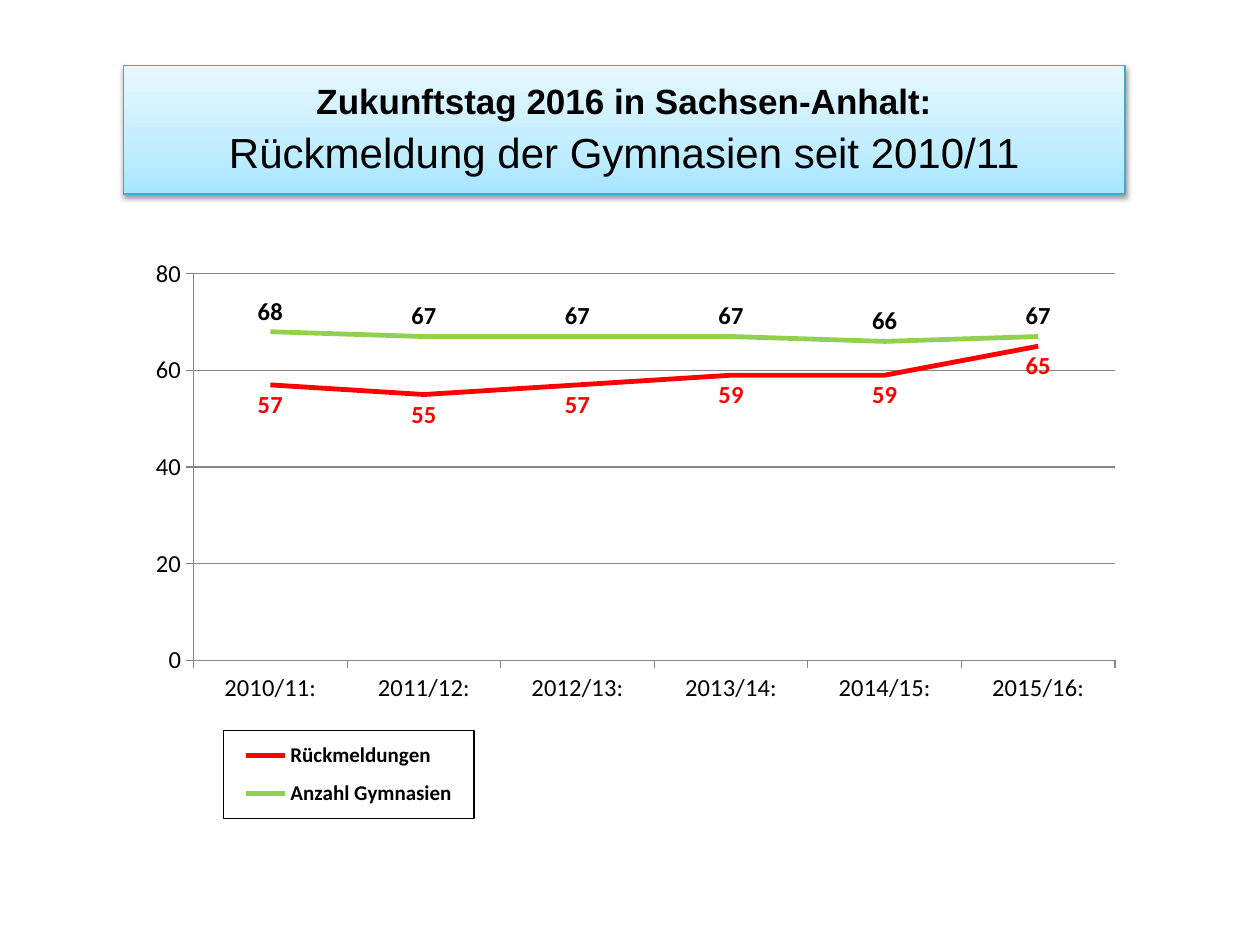
from dataclasses import dataclass
from copy import deepcopy

from lxml.etree import SubElement
from pptx import Presentation
from pptx.chart.data import CategoryChartData
from pptx.dml.color import RGBColor
from pptx.enum.chart import XL_CHART_TYPE, XL_LABEL_POSITION, XL_LEGEND_POSITION, XL_TICK_MARK
from pptx.enum.shapes import MSO_SHAPE
from pptx.enum.text import MSO_ANCHOR, PP_ALIGN
from pptx.oxml import parse_xml
from pptx.oxml.ns import nsdecls, qn
from pptx.util import Inches, Pt


@dataclass(frozen=True)
class Theme:
    ink: str = "000000"
    grid: str = "868686"
    border: str = "46AAC5"
    responses: str = "FF0000"
    schools: str = "92D050"
    banner: tuple = ((0, "A7E6FF"), (0.35, "C1EDFF"), (1, "E7F8FF"))
    title_font: str = "Arial"
    chart_font: str = "Calibri"
    lead_size: int = 20
    title_size: int = 24
    label_size: int = 14
    legend_size: int = 12
    series_width: float = 2.75
    hairline: float = 0.75


THEME = Theme()
LEFT, WIDTH = Inches(0.98), Inches(7.95)
YEARS = [f"{year}/{year - 1999}:" for year in range(2010, 2016)]
SERIES = (
    ("Rückmeldungen", (57, 55, 57, 59, 59, 65), THEME.responses,
     THEME.responses, XL_LABEL_POSITION.BELOW),
    ("Anzahl Gymnasien", (68, 67, 67, 67, 66, 67), THEME.schools,
     THEME.ink, XL_LABEL_POSITION.ABOVE),
)


def rgb(value):
    return RGBColor.from_string(value)


def style_font(font, name, size, color=THEME.ink, bold=False):
    font.name, font.size, font.bold = name, Pt(size), bold
    font.color.rgb = rgb(color)


def style_line(line, color, width=THEME.hairline):
    line.color.rgb = rgb(color)
    line.width = Pt(width)


def fill_gradient(shape, stops):
    """Fill from bottom to top with any number of stops."""
    shape.fill.gradient()
    shape.fill.gradient_angle = 90
    stop_list = shape._element.spPr.find(".//" + qn("a:gsLst"))
    while len(stop_list) < len(stops):
        stop_list.append(deepcopy(stop_list[0]))
    for stop, (position, color) in zip(shape.fill.gradient_stops, stops):
        stop.position = position
        stop.color.rgb = rgb(color)


def add_soft_shadow(shape):
    shape.shadow.inherit = False
    effects = shape._element.spPr.find(qn("a:effectLst"))
    shadow = SubElement(effects, qn("a:outerShdw"), blurRad=str(Pt(3.1)),
                        dist=str(Pt(1.6)), dir="5400000", rotWithShape="0")
    color = SubElement(shadow, qn("a:srgbClr"), val=THEME.ink)
    SubElement(color, qn("a:alpha"), val="38000")


def add_banner(page, lead, title):
    banner = page.shapes.add_shape(MSO_SHAPE.RECTANGLE, LEFT, Inches(0.52), WIDTH, Inches(1.02))
    fill_gradient(banner, THEME.banner)
    style_line(banner.line, THEME.border)
    add_soft_shadow(banner)
    frame = banner.text_frame
    frame.word_wrap = True
    frame.vertical_anchor = MSO_ANCHOR.MIDDLE
    frame.margin_bottom = Inches(0.11)
    para = frame.paragraphs[0]
    para.text = f"{lead}\v{title}"
    para.alignment = PP_ALIGN.CENTER
    para.line_spacing = 1.1
    lead_span, title_span = para.runs
    style_font(lead_span.font, THEME.title_font, THEME.lead_size, bold=True)
    style_font(title_span.font, THEME.title_font, THEME.title_size)


def manual_layout(x, y, width, height, inner=False):
    """Layout element with lengths as shares of the chart's size."""
    target = '<c:layoutTarget val="inner"/>' if inner else ""
    return parse_xml(
        f'<c:layout {nsdecls("c")}><c:manualLayout>{target}'
        '<c:xMode val="edge"/><c:yMode val="edge"/>'
        f'<c:x val="{x}"/><c:y val="{y}"/><c:w val="{width}"/><c:h val="{height}"/>'
        '</c:manualLayout></c:layout>')


def remove_layout(element):
    for layout in element.findall(qn("c:layout")):
        element.remove(layout)


def style_axes(chart):
    for axis in (chart.category_axis, chart.value_axis):
        axis.major_tick_mark = XL_TICK_MARK.OUTSIDE
        axis.minor_tick_mark = XL_TICK_MARK.NONE
        style_line(axis.format.line, THEME.grid)
        style_font(axis.tick_labels.font, THEME.chart_font, THEME.label_size)
    scale = chart.value_axis
    scale.minimum_scale, scale.maximum_scale, scale.major_unit = 0, 80, 20
    scale.has_major_gridlines = True
    style_line(scale.major_gridlines.format.line, THEME.grid)


def style_series(series, color, label_color, label_position):
    series.smooth = False
    style_line(series.format.line, color, THEME.series_width)
    labels = series.data_labels
    labels.show_value = True
    labels.position = label_position
    style_font(labels.font, THEME.chart_font, THEME.label_size, label_color, bold=True)


def add_framed_legend(chart):
    chart.has_legend = True
    legend = chart.legend
    legend.position = XL_LEGEND_POSITION.BOTTOM
    legend.include_in_layout = False
    style_font(legend.font, THEME.chart_font, THEME.legend_size, bold=True)
    element = legend._element
    remove_layout(element)
    element.find(qn("c:legendPos")).addnext(manual_layout(0.1, 0.83, 0.25, 0.15))
    element.find(qn("c:txPr")).addprevious(parse_xml(
        f'<c:spPr {nsdecls("c", "a")}><a:ln w="{Pt(THEME.hairline)}"><a:solidFill>'
        f'<a:srgbClr val="{THEME.ink}"/></a:solidFill></a:ln></c:spPr>'))


def add_response_chart(page):
    data = CategoryChartData()
    data.categories = YEARS
    for name, values, *_ in SERIES:
        data.add_series(name, values)
    chart = page.shapes.add_chart(XL_CHART_TYPE.LINE, LEFT, Inches(1.94),
                                  WIDTH, Inches(4.65), data).chart
    chart.has_title = False
    style_font(chart.font, THEME.chart_font, THEME.label_size)
    plot = chart.plots[0]
    plot.vary_by_categories = False
    for series, (_, _, *style) in zip(plot.series, SERIES):
        style_series(series, *style)
    style_axes(chart)
    add_framed_legend(chart)
    plot_area = chart._chartSpace.find(".//" + qn("c:plotArea"))
    remove_layout(plot_area)
    plot_area.insert(0, manual_layout(0.07, 0.05, 0.92, 0.66, inner=True))


def main():
    deck = Presentation()
    deck.slide_width, deck.slide_height = Inches(10), Inches(7.5)
    page = deck.slides.add_slide(deck.slide_layouts[6])
    add_banner(page, "Zukunftstag 2016 in Sachsen-Anhalt:",
               "Rückmeldung der Gymnasien seit 2010/11")
    add_response_chart(page)
    deck.save("out.pptx")


if __name__ == "__main__":
    main()
